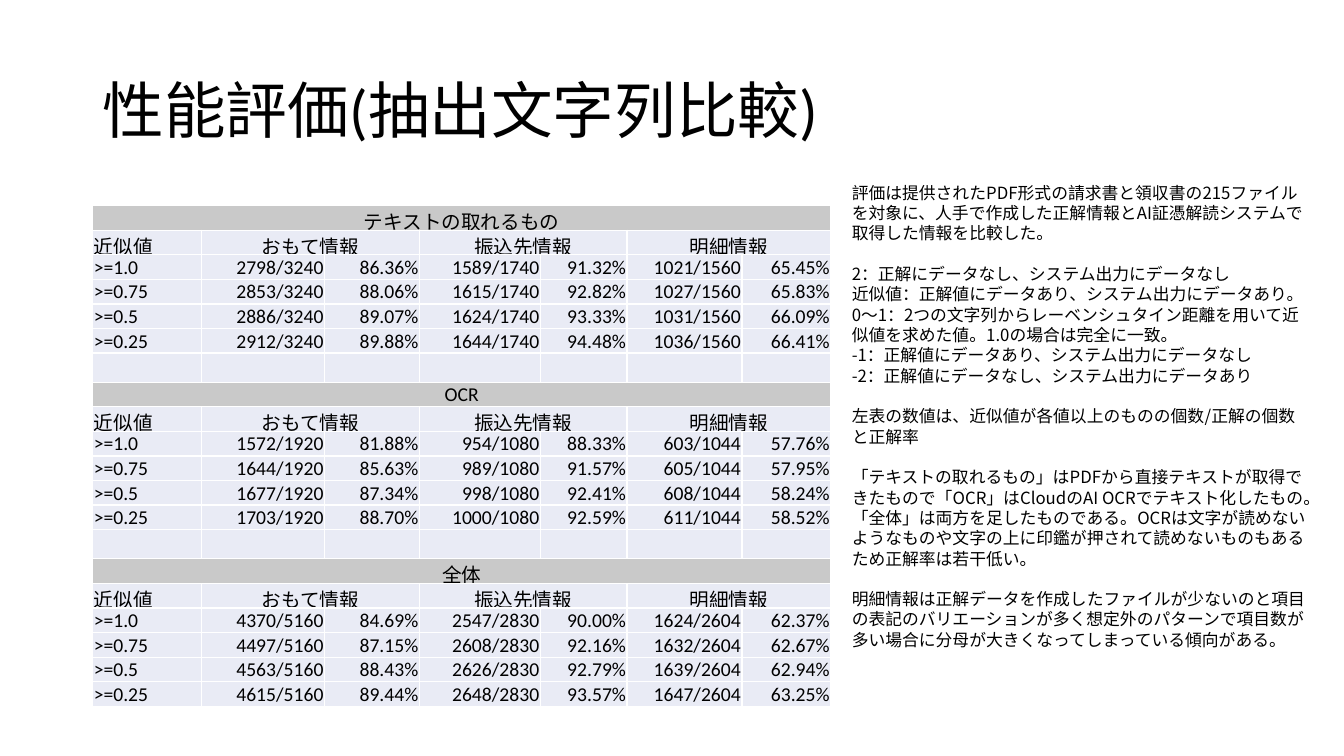
from lxml.etree import SubElement
from pptx import Presentation
from pptx.dml.color import RGBColor
from pptx.enum.text import MSO_ANCHOR, PP_ALIGN
from pptx.oxml.ns import qn
from pptx.util import Inches, Pt

COLORS = {"text": "000000", "head": "C9C9C9", "body": "E9EBF5"}
LATIN, ASIAN = "Calibri", "Noto Sans CJK JP"


def write(para, text, size, font=LATIN, align=PP_ALIGN.LEFT, line=None, before=0):
    para.alignment = align
    para.space_before = Pt(before)
    if line:
        para.line_spacing = line
    if not text:
        SubElement(para._p, qn("a:endParaRPr"), sz=str(size * 100))
        return
    run = para.add_run()
    run.text = text
    run.font.size = Pt(size)
    run.font.name = font
    run.font.color.rgb = RGBColor.from_string(COLORS["text"])
    SubElement(run.font._element, qn("a:ea"), typeface=ASIAN)


deck = Presentation()
deck.slide_width, deck.slide_height = Inches(13.33), Inches(7.5)
slide = deck.slides.add_slide(deck.slide_layouts[6])

# Title
title = slide.shapes.add_textbox(Inches(0.92), Inches(0.4), Inches(11.5), Inches(1.45))
frame = title.text_frame
frame.word_wrap = True
frame.vertical_anchor = MSO_ANCHOR.MIDDLE
write(frame.paragraphs[0], "性能評価(抽出文字列比較)", 44, line=0.9)

# Table contents: count and rate for each of the three kinds of data
groups = {
    "テキストの取れるもの": [
        ["2798/3240", "86.36%", "1589/1740", "91.32%", "1021/1560", "65.45%"],
        ["2853/3240", "88.06%", "1615/1740", "92.82%", "1027/1560", "65.83%"],
        ["2886/3240", "89.07%", "1624/1740", "93.33%", "1031/1560", "66.09%"],
        ["2912/3240", "89.88%", "1644/1740", "94.48%", "1036/1560", "66.41%"],
    ],
    "OCR": [
        ["1572/1920", "81.88%", "954/1080", "88.33%", "603/1044", "57.76%"],
        ["1644/1920", "85.63%", "989/1080", "91.57%", "605/1044", "57.95%"],
        ["1677/1920", "87.34%", "998/1080", "92.41%", "608/1044", "58.24%"],
        ["1703/1920", "88.70%", "1000/1080", "92.59%", "611/1044", "58.52%"],
    ],
    "全体": [
        ["4370/5160", "84.69%", "2547/2830", "90.00%", "1624/2604", "62.37%"],
        ["4497/5160", "87.15%", "2608/2830", "92.16%", "1632/2604", "62.67%"],
        ["4563/5160", "88.43%", "2626/2830", "92.79%", "1639/2604", "62.94%"],
        ["4615/5160", "89.44%", "2648/2830", "93.57%", "1647/2604", "63.25%"],
    ],
}
limits = [">=1.0", ">=0.75", ">=0.5", ">=0.25"]
names = ["近似値", "おもて情報", "", "振込先情報", "", "明細情報", ""]
blank = [""] * 7

rows = []
for name, data in groups.items():
    if rows:
        rows.append(blank)
    rows += [[name] + [""] * 6, names]
    rows += [[limit] + vals for limit, vals in zip(limits, data)]

# Table
widths = [1.08, 1.22, 0.94, 1.2, 0.86, 1.14, 0.88]
table = slide.shapes.add_table(len(rows), len(widths), Inches(0.92), Inches(2.04),
                               Inches(7.3), Inches(4.87)).table
table.first_row = table.horz_banding = False
for col, width in zip(table.columns, widths):
    col.width = Inches(width)

for r, vals in enumerate(rows):
    table.rows[r].height = Inches(0.29 if vals is blank else 0.24)
    is_head = vals[0] in groups
    for c, text in enumerate(vals):
        cell = table.cell(r, c)
        cell.margin_left = cell.margin_right = cell.margin_top = Inches(0.01)
        cell.margin_bottom = 0
        cell.vertical_anchor = MSO_ANCHOR.BOTTOM
        cell.fill.solid()
        cell.fill.fore_color.rgb = RGBColor.from_string(COLORS["head" if is_head else "body"])
        if is_head or (vals is names and c):
            align = PP_ALIGN.CENTER
        else:
            align = PP_ALIGN.RIGHT if c else PP_ALIGN.LEFT
        write(cell.text_frame.paragraphs[0], text, 14, align=align)
    if is_head:
        table.cell(r, 0).merge(table.cell(r, 6))
    elif vals is names:
        for c in (1, 3, 5):
            table.cell(r, c).merge(table.cell(r, c + 1))

# Notes beside the table, one list for each block
notes = [
    ["評価は提供されたPDF形式の請求書と領収書の215ファイルを対象に、人手で作成した正解情報とAI証憑解読システムで取得した情報を比較した。"],
    ["2：正解にデータなし、システム出力にデータなし",
     "近似値：正解値にデータあり、システム出力にデータあり。0〜1：2つの文字列からレーベンシュタイン距離を用いて近似値を求めた値。1.0の場合は完全に一致。",
     "-1：正解値にデータあり、システム出力にデータなし",
     "-2：正解値にデータなし、システム出力にデータあり"],
    ["左表の数値は、近似値が各値以上のものの個数/正解の個数",
     "と正解率"],
    ["「テキストの取れるもの」はPDFから直接テキストが取得できたもので「OCR」はCloudのAI OCRでテキスト化したもの。「全体」は両方を足したものである。OCRは文字が読めないようなものや文字の上に印鑑が押されて読めないものもあるため正解率は若干低い。"],
    ["明細情報は正解データを作成したファイルが少ないのと項目の表記のバリエーションが多く想定外のパターンで項目数が多い場合に分母が大きくなってしまっている傾向がある。"],
]
box = slide.shapes.add_textbox(Inches(8.35), Inches(1.76), Inches(4.7), Inches(5.15))
frame = box.text_frame
frame.word_wrap = True
para = frame.paragraphs[0]
for b, block in enumerate(notes):
    for n, text in enumerate(block):
        if b or n:
            para = frame.add_paragraph()
        gap = 14.5 if b and not n else 0
        write(para, text, 12, font=ASIAN, line=Pt(14.5), before=gap)

deck.save("out.pptx")
